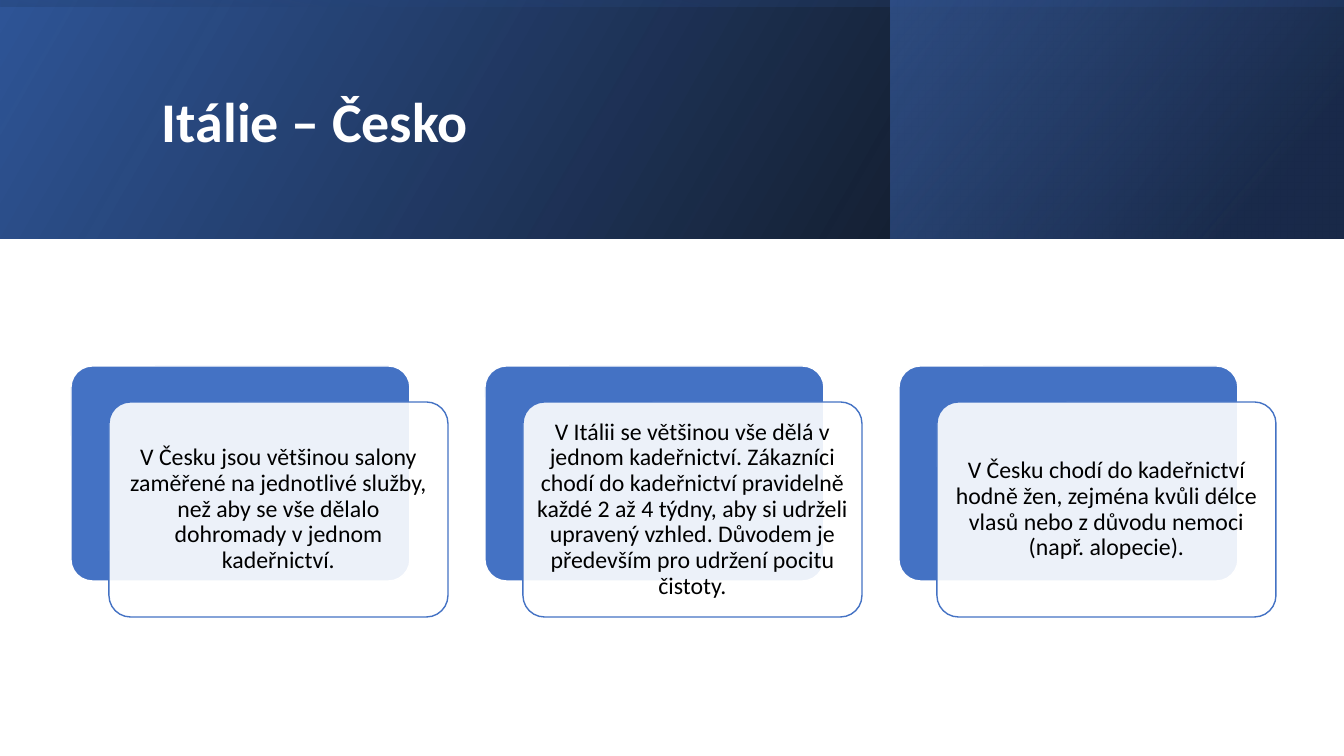
from dataclasses import dataclass

from lxml import etree
from pptx import Presentation, util as u
from pptx.dml.color import RGBColor
from pptx.enum import shapes, text
from pptx.oxml import parse_xml
from pptx.oxml.ns import nsdecls, qn


@dataclass(frozen=True)
class Theme:
    font: str = "Calibri"
    blue: str = "4472C4"
    deep: str = "2F5597"
    navy: str = "203864"
    black: str = "000000"
    white: str = "FFFFFF"
    title: int = 40
    body: int = 17


def px(n):
    return u.Emu(round(n * 914400 / 100.8))


def rgb(code):
    return RGBColor.from_string(code)


class Deck:
    def __init__(self, theme, width, height):
        self.theme = theme
        self.file = Presentation()
        self.file.slide_width, self.file.slide_height = px(width), px(height)
        self.slide = self.file.slides.add_slide(self.file.slide_layouts[6])

    def shape(self, kind, box):
        item = self.slide.shapes.add_shape(kind, *map(px, box))
        item.shadow.inherit = False
        return item

    def band(self, box, stops, angle, turn=0):
        """Add a mirrored gradient bar; stops are (place, colour, opacity) in percent."""
        bar = self.shape(shapes.MSO_SHAPE.RECTANGLE, box)
        bar.line.fill.background()
        bar.rotation = turn
        props = bar._element.spPr
        props.get_or_add_xfrm().set("flipH", "1")
        marks = "".join(
            f'<a:gs pos="{place * 1000}"><a:srgbClr val="{color}">'
            f'<a:alpha val="{alpha * 1000}"/></a:srgbClr></a:gs>'
            for place, color, alpha in stops)
        fill = parse_xml(
            f'<a:gradFill {nsdecls("a")} rotWithShape="1"><a:gsLst>{marks}</a:gsLst>'
            f'<a:lin ang="{angle * 60000}" scaled="0"/></a:gradFill>')
        props.find(qn("a:prstGeom")).addnext(fill)

    def panel(self, box, fill, line, alpha=100):
        item = self.shape(shapes.MSO_SHAPE.ROUNDED_RECTANGLE, box)
        item.adjustments[0] = 0.1
        item.fill.solid()
        item.fill.fore_color.rgb = rgb(fill)
        if alpha < 100:
            color = item._element.spPr.find(qn("a:solidFill"))[0]
            etree.SubElement(color, qn("a:alpha")).set("val", str(alpha * 1000))
        item.line.color.rgb = rgb(line)
        item.line.width = u.Pt(1)
        return item

    def label(self, item, words, size, color, align, inset, bold=False):
        frame = item.text_frame
        frame.word_wrap = True
        frame.vertical_anchor = text.MSO_ANCHOR.MIDDLE
        frame.margin_left = frame.margin_right = px(inset)
        frame.margin_top = frame.margin_bottom = px(inset)
        para = frame.paragraphs[0]
        para.text = words
        para.alignment = align
        para.line_spacing = 0.9
        font = para.font
        font.name, font.size, font.bold = self.theme.font, u.Pt(size), bold
        font.color.rgb = rgb(color)

    def title(self, box, words):
        item = self.slide.shapes.add_textbox(*map(px, box))
        self.label(item, words, self.theme.title, self.theme.white,
                   text.PP_ALIGN.LEFT, 10, bold=True)

    def card(self, left, top, words):
        """Add a blue panel with a pale text panel set lower and to the right."""
        look, size = self.theme, (339, 215)
        self.panel((left, top, *size), look.blue, look.white)
        front = self.panel((left + 38, top + 36, *size), look.white, look.blue, 90)
        self.label(front, words, look.body, look.black, text.PP_ALIGN.CENTER, 7)


CARDS = (
    "V Česku jsou většinou salony zaměřené na jednotlivé služby, než aby se vše "
    "dělalo dohromady v jednom kadeřnictví.",
    "V Itálii se většinou vše dělá v jednom kadeřnictví. Zákazníci chodí do "
    "kadeřnictví pravidelně každé 2 až 4 týdny, aby si udrželi upravený vzhled. "
    "Důvodem je především pro udržení pocitu čistoty.",
    "V Česku chodí do kadeřnictví hodně žen, zejména kvůli délce vlasů nebo "
    "z důvodu nemoci (např. alopecie).",
)


def main():
    look = Theme()
    wide, high, head = 1344, 756, 239
    deck = Deck(look, wide, high)
    deck.band((0, 0, wide, head), [(0, look.black, 96), (100, look.deep, 100)], 330)
    deck.band((891, 0, 452, head), [(19, look.navy, 68), (100, look.blue, 48)], 320)
    shift = (wide - head) / 2
    deck.band((shift, -shift, head, wide),
              [(23, look.deep, 16), (99, look.black, 45)], 350, turn=270)
    deck.title((152, 38, 1072, 173), "Itálie – Česko")
    for index, words in enumerate(CARDS):
        deck.card(71 + 414 * index, 366, words)
    deck.file.save("out.pptx")


if __name__ == "__main__":
    main()
